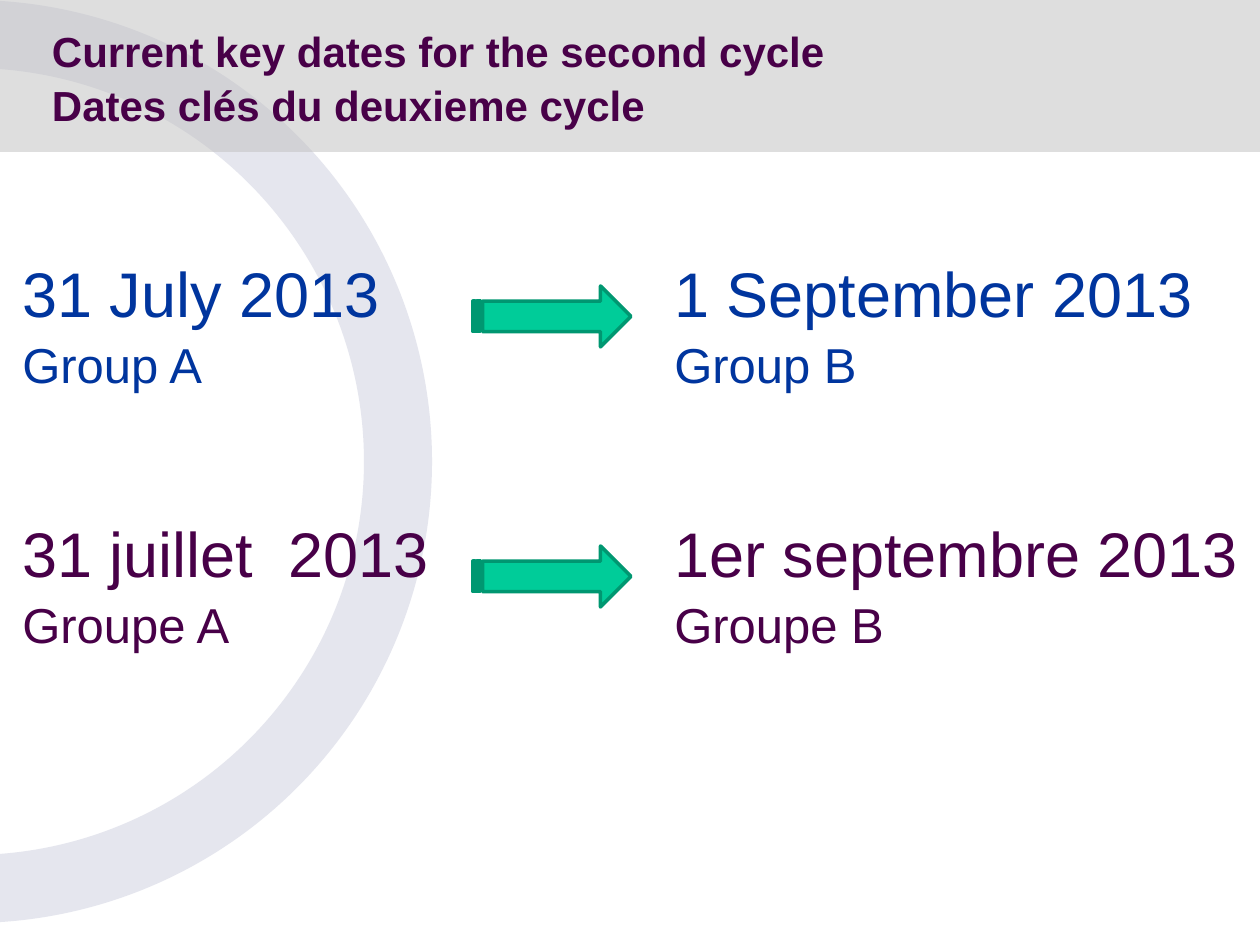
import pptx
import pptx.util
import pptx.dml.color
import pptx.enum.shapes
import pptx.enum.text
import pptx.oxml
import pptx.oxml.ns

SHAPE = pptx.enum.shapes.MSO_SHAPE
PX = 914400 / 126
PURPLE, BLUE = "480048", "00359E"
GREEN, DARK_GREEN = "00CC99", "009771"
SILVER, PALE = "C0C0C0", "E5E6EE"


def emu(px):
    return pptx.util.Emu(round(px * PX))


def rgb(color):
    return pptx.dml.color.RGBColor.from_string(color)


class Deck:
    font = "Arial"
    line_spacing = 1.07

    def __init__(self, width, height):
        self.prs = pptx.Presentation()
        self.prs.slide_width, self.prs.slide_height = emu(width), emu(height)
        self.s = self.prs.slides.add_slide(self.prs.slide_layouts[6])

    def shape(self, kind, x, y, w, h, fill, line=None, opacity=None):
        sp = self.s.shapes.add_shape(kind, emu(x), emu(y), emu(w), emu(h))
        sp.shadow.inherit = False
        sp.fill.solid()
        sp.fill.fore_color.rgb = rgb(fill)
        if opacity is not None:
            clr = sp.fill._xPr.find(".//" + pptx.oxml.ns.qn("a:srgbClr"))
            clr.append(pptx.oxml.parse_xml(
                f'<a:alpha {pptx.oxml.ns.nsdecls("a")} val="{opacity * 1000}"/>'))
        if line:
            sp.line.color.rgb = rgb(line)
            sp.line.width = pptx.util.Pt(2)
        else:
            sp.line.fill.background()
        return sp

    def run(self, p, text, size, color, bold=False):
        r = p.add_run()
        r.text = text
        r.font.name, r.font.size = self.font, pptx.util.Pt(size)
        r.font.bold, r.font.color.rgb = bold, rgb(color)

    def paragraph(self, p):
        p.alignment = pptx.enum.text.PP_ALIGN.LEFT
        p.line_spacing = self.line_spacing
        return p

    def title(self, first, second):
        sp = self.shape(SHAPE.RECTANGLE, 0, 0, 1260, 152, SILVER, opacity=51)
        tf = sp.text_frame
        tf.word_wrap = True
        tf.vertical_anchor = pptx.enum.text.MSO_ANCHOR.MIDDLE
        tf.margin_left, tf.margin_top, tf.margin_bottom = emu(52), emu(25), emu(25)
        p = self.paragraph(tf.paragraphs[0])
        self.run(p, first, 24, PURPLE, bold=True)
        p.add_line_break()
        self.run(p, second, 24, PURPLE, bold=True)

    def date(self, x, y, w, day, group, color):
        sp = self.s.shapes.add_textbox(emu(x), emu(y), emu(w), emu(149))
        tf = sp.text_frame
        tf.word_wrap = False
        self.run(self.paragraph(tf.paragraphs[0]), day, 36, color)
        self.run(self.paragraph(tf.add_paragraph()), group, 28, color)

    def arrow(self, x, y):
        self.shape(SHAPE.STRIPED_RIGHT_ARROW, x, y, 158, 61, GREEN, DARK_GREEN)

    def ring(self, x, y, size, thickness):
        sp = self.shape(SHAPE.DONUT, x, y, size, size, PALE)
        sp.adjustments[0] = thickness / size


def main():
    deck = Deck(1260, 945)
    deck.ring(-491, 0, 923, 68)
    deck.title("Current key dates for the second cycle",
               "Dates clés du deuxieme cycle")
    rows = [
        (BLUE, ("31 July 2013", "Group A", 388),
         ("1 September 2013", "Group B", 546)),
        (PURPLE, ("31 juillet  2013", "Groupe A", 441),
         ("1er septembre 2013", "Groupe B", 593)),
    ]
    for i, (color, start, end) in enumerate(rows):
        y = 243 + 260 * i
        for x, (day, group, width) in ((10, start), (662, end)):
            deck.date(x, y, width, day, group, color)
        deck.arrow(473, y + 43)
    deck.prs.save("out.pptx")


if __name__ == "__main__":
    main()
